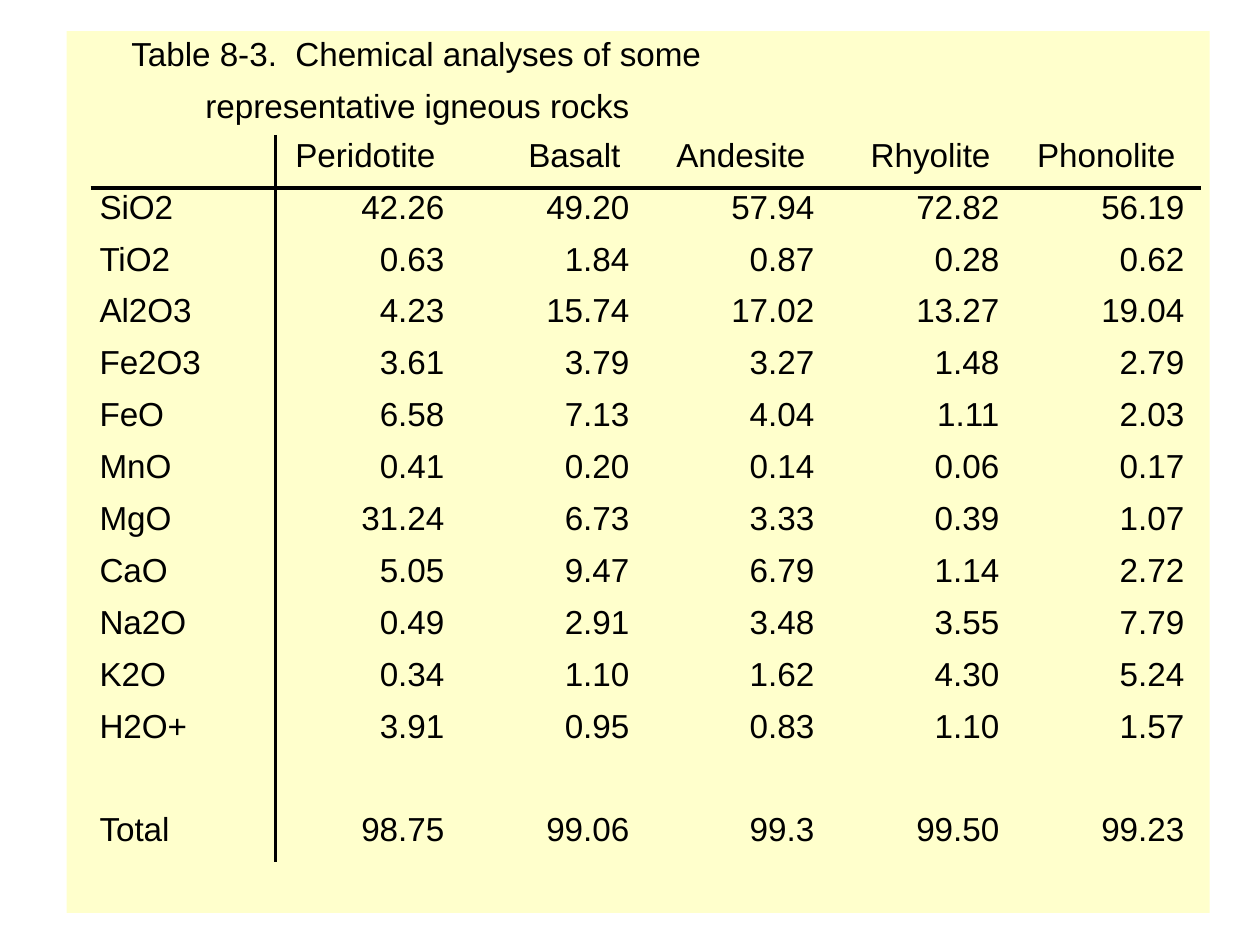
from lxml import etree
from pptx import Presentation
from pptx.dml.color import RGBColor
from pptx.enum.shapes import MSO_CONNECTOR, MSO_SHAPE
from pptx.enum.text import MSO_ANCHOR, PP_ALIGN
from pptx.oxml.ns import qn
from pptx.util import Inches, Pt

LEFT, RIGHT = PP_ALIGN.LEFT, PP_ALIGN.RIGHT
TOP = MSO_ANCHOR.TOP
RECTANGLE = MSO_SHAPE.RECTANGLE
STRAIGHT = MSO_CONNECTOR.STRAIGHT
CREAM = RGBColor(0xFF, 0xFF, 0xCC)
BLACK = RGBColor(0, 0, 0)
NO_STYLE = "{2D5ABB26-0587-4C30-8999-92F81FD0307C}"

TITLE_LINES = [
    (0.22, -1.95, "Table 8-3.  Chemical analyses of some"),
    (0.62, -0.95, "representative igneous rocks"),
]
ANALYSES = [
    ["", "Peridotite", "Basalt", "Andesite", "Rhyolite", "Phonolite"],
    ["SiO2", "42.26", "49.20", "57.94", "72.82", "56.19"],
    ["TiO2", "0.63", "1.84", "0.87", "0.28", "0.62"],
    ["Al2O3", "4.23", "15.74", "17.02", "13.27", "19.04"],
    ["Fe2O3", "3.61", "3.79", "3.27", "1.48", "2.79"],
    ["FeO", "6.58", "7.13", "4.04", "1.11", "2.03"],
    ["MnO", "0.41", "0.20", "0.14", "0.06", "0.17"],
    ["MgO", "31.24", "6.73", "3.33", "0.39", "1.07"],
    ["CaO", "5.05", "9.47", "6.79", "1.14", "2.72"],
    ["Na2O", "0.49", "2.91", "3.48", "3.55", "7.79"],
    ["K2O", "0.34", "1.10", "1.62", "4.30", "5.24"],
    ["H2O+", "3.91", "0.95", "0.83", "1.10", "1.57"],
    ["", "", "", "", "", ""],
    ["Total", "98.75", "99.06", "99.3", "99.50", "99.23"],
]


def apply(target, values):
    for name, value in values.items():
        setattr(target, name, value)


class RockSlide:
    font = {"name": "Arial", "size": Pt(19)}
    left, top = 0.72, 1.07
    column, row = 8.81 / 6, 5.77 / 14

    def __init__(self, deck):
        self.deck = deck
        self.slide = deck.slides.add_slide(deck.slide_layouts[6])
        self.shapes = self.slide.shapes

    def point(self, column, row):
        return (Inches(self.left + column * self.column),
                Inches(self.top + row * self.row))

    def size(self, columns, rows):
        return Inches(columns * self.column), Inches(rows * self.row)

    def add_words(self, frame, words, align):
        para = frame.paragraphs[0]
        para.alignment = align
        span = para.add_run()
        span.text = words
        apply(span.font, self.font)
        span.font.color.rgb = BLACK

    def panel(self, left, top, width, height):
        wide, high = self.deck.slide_width, self.deck.slide_height
        box = self.shapes.add_shape(
            RECTANGLE, int(left * wide), int(top * high),
            int(width * wide), int(height * high))
        box.shadow.inherit = False
        box.fill.solid()
        box.fill.fore_color.rgb = CREAM
        box.line.fill.background()

    def text(self, column, row, words):
        box = self.shapes.add_textbox(*self.point(column, row), *self.size(4, 0.9))
        apply(box.text_frame, {
            "word_wrap": True, "margin_left": 0, "margin_right": 0,
            "margin_top": 0, "margin_bottom": 0})
        self.add_words(box.text_frame, words, LEFT)

    def table(self, rows):
        row_count, column_count = len(rows), len(rows[0])
        table = self.shapes.add_table(
            row_count, column_count, *self.point(0, 0),
            *self.size(column_count, row_count)).table
        apply(table, {"first_row": False, "horz_banding": False})
        table._tbl.tblPr.find(qn("a:tableStyleId")).text = NO_STYLE
        for row_index, values in enumerate(rows):
            for column_index, words in enumerate(values):
                cell = table.cell(row_index, column_index)
                cell.fill.solid()
                cell.fill.fore_color.rgb = CREAM
                apply(cell, {
                    "margin_left": Inches(0.07),
                    "margin_right": Inches(0.13 if row_index else 0.2),
                    "margin_top": Inches(0.02), "margin_bottom": 0,
                    "vertical_anchor": TOP})
                if words:
                    self.add_words(cell.text_frame, words,
                                   RIGHT if column_index else LEFT)

    def rule(self, start, end):
        line = self.shapes.add_connector(
            STRAIGHT, *self.point(*start), *self.point(*end))
        line.line.color.rgb = BLACK
        line.line.width = Pt(2)
        etree.SubElement(line._element.spPr, qn("a:effectLst"))


def main():
    deck = Presentation()
    apply(deck, {"slide_width": Inches(10), "slide_height": Inches(7.5)})
    page = RockSlide(deck)
    page.panel(0.053, 0.033, 0.907, 0.933)
    for column, row, words in TITLE_LINES:
        page.text(column, row, words)
    page.table(ANALYSES)
    page.rule((1, 0), (1, len(ANALYSES)))
    page.rule((0, 1.02), (len(ANALYSES[0]), 1.02))
    deck.save("out.pptx")


if __name__ == "__main__":
    main()
